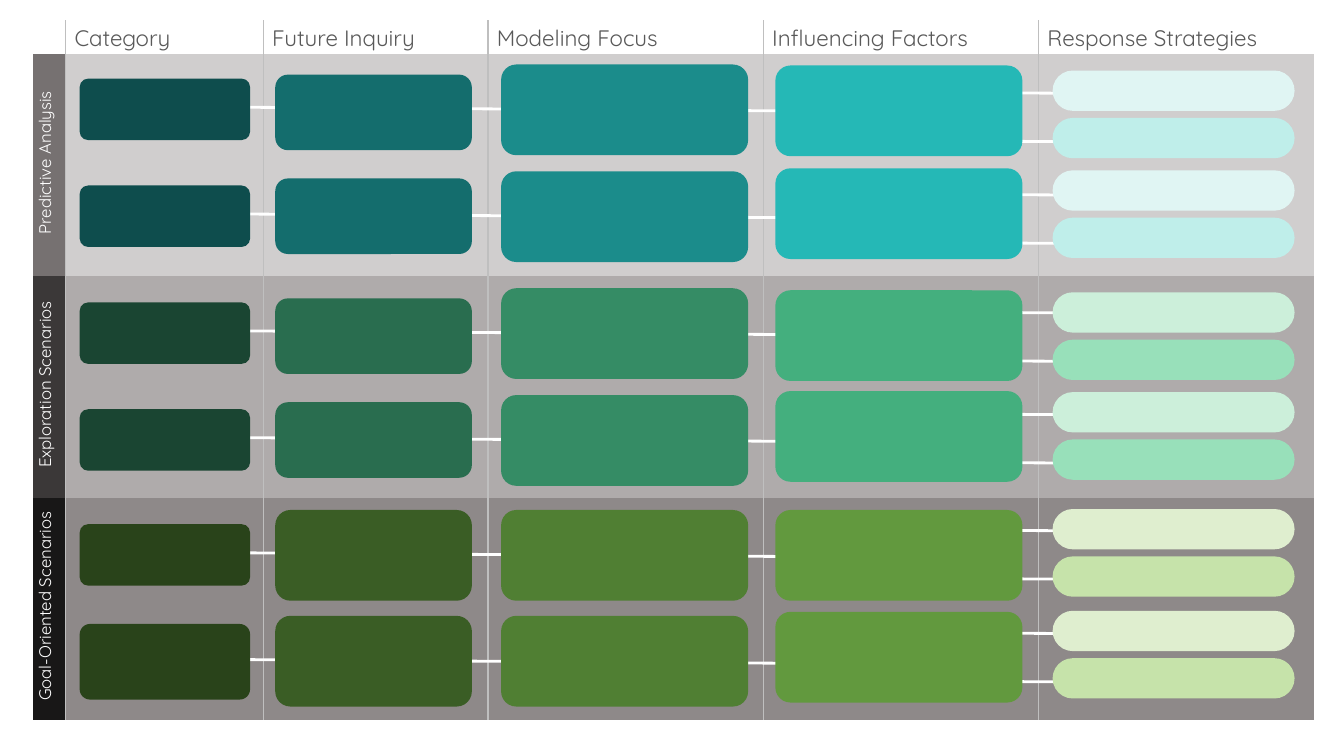
from pptx import Presentation
from pptx.dml.color import RGBColor
from pptx.enum import shapes, text
from pptx.oxml import ns, xmlchemy
from pptx.util import Inches, Pt

FONT = "Quicksand"
NO_STYLE = "{2D5ABB26-0587-4C30-8999-92F81FD0307C}"
COLORS = {"heading": "595959", "divider": "BFBFBF", "white": "FFFFFF"}

HEADINGS = ["Category", "Future Inquiry", "Modeling Focus",
            "Influencing Factors", "Response Strategies"]
COLUMN_WIDTHS = [0.32, 1.96, 2.23, 2.73, 2.73, 2.73]
ROW_HEIGHTS = [0.34, 2.2, 2.2, 2.2]

# Label, label fill, band fill, four box fills, two pill fills
GROUPS = [
    ("Predictive Analysis", "767171", "D0CECE",
     ["0E4D4D", "146D6D", "1B8C8B", "25B8B6"], ["E0F5F3", "BFEEEA"]),
    ("Exploration Scenarios", "3B3838", "AFABAB",
     ["1A4532", "296D4F", "358C65", "44AF7E"], ["CCEFDA", "98E0BA"]),
    ("Goal-Oriented Scenarios", "181717", "8E8989",
     ["29431A", "3A5D25", "507F33", "62993E"], ["DFEECF", "C6E3AA"]),
]

# Left, width, corner ratio, heights and tops of the six boxes in a column
BOX_COLUMNS = [
    (0.79, 1.69, 0.137, [0.61] * 5 + [0.75], [0.78, 1.84, 3, 4.06, 5.2, 6.19]),
    (2.73, 1.95, 0.167, [0.75] * 4 + [0.9] * 2, [0.74, 1.77, 2.96, 3.99, 5.06, 6.11]),
    (4.97, 2.45, 0.167, [0.9] * 6, [0.64, 1.7, 2.86, 3.92, 5.06, 6.11]),
    (7.69, 2.45, 0.167, [0.9] * 6, [0.65, 1.67, 2.88, 3.88, 5.06, 6.07]),
]
PILL_TOPS = [0.7, 1.69, 2.9, 3.89, 5.05, 6.06]
PILL_STEP = 0.47

# Start of the long line, then height of the upper short line
LINE_STARTS = [(1.84, 1.06, 0.92), (1.94, 2.12, 1.93), (2.01, 3.28, 3.1),
               (2.11, 4.34, 4.11), (1.76, 5.48, 5.26), (1.87, 6.54, 6.28)]
BRANCH_OFFSET, BRANCH_STEP = 7.82, 0.48


def rgb(value):
    return RGBColor.from_string(value)


def border_xml(side, color):
    fill = (f'<a:solidFill><a:srgbClr val="{color}"/></a:solidFill>'
            if color else "<a:noFill/>")
    return xmlchemy.OxmlElement(f"a:{side}"), fill


def set_borders(cell_element, has_left, has_right):
    """Draw the vertical dividers of a table cell ahead of its fill."""
    properties = cell_element.get_or_add_tcPr()
    drawn = [side for side, wanted in (("a:lnL", has_left), ("a:lnR", has_right)) if wanted]
    for position, side in enumerate(drawn):
        line = xmlchemy.OxmlElement(side)
        line.set("w", str(Pt(1)))
        fill = xmlchemy.OxmlElement("a:solidFill")
        color = xmlchemy.OxmlElement("a:srgbClr")
        color.set("val", COLORS["divider"])
        fill.append(color)
        line.append(fill)
        properties.insert(position, line)


def write_cell(cell, words, size, color, alignment):
    paragraph = cell.text_frame.paragraphs[0]
    paragraph.alignment = alignment
    run = paragraph.add_run()
    run.text = words
    run.font.name = FONT
    run.font.size = Pt(size)
    run.font.color.rgb = rgb(color)


def add_scenario_table(slide):
    frame = slide.shapes.add_table(
        len(ROW_HEIGHTS), len(COLUMN_WIDTHS), Inches(0.33), Inches(0.2),
        Inches(sum(COLUMN_WIDTHS)), Inches(sum(ROW_HEIGHTS)))
    table = frame.table
    table.first_row = table.horz_banding = False
    for style in frame.element.iter(ns.qn("a:tableStyleId")):
        style.text = NO_STYLE
    for column, width in zip(table.columns, COLUMN_WIDTHS):
        column.width = Inches(width)
    for row, height in zip(table.rows, ROW_HEIGHTS):
        row.height = Inches(height)

    for cell in table.iter_cells():
        cell.margin_left = Inches(0.09)
        cell.margin_right = cell.margin_top = Inches(0.01)
        cell.margin_bottom = 0
        cell.vertical_anchor = text.MSO_ANCHOR.MIDDLE
        cell.fill.background()
    for index, heading in enumerate(HEADINGS, start=1):
        write_cell(table.cell(0, index), heading, 16, COLORS["heading"],
                   text.PP_ALIGN.LEFT)
    for row, (label, label_fill, band_fill, *_) in enumerate(GROUPS, start=1):
        for column in range(len(COLUMN_WIDTHS)):
            fill = table.cell(row, column).fill
            fill.solid()
            fill.fore_color.rgb = rgb(band_fill if column else label_fill)
        label_cell = table.cell(row, 0)
        label_cell.margin_left = Inches(0.06)
        write_cell(label_cell, label, 12, COLORS["white"], text.PP_ALIGN.CENTER)

    last = len(COLUMN_WIDTHS) - 1
    for index, element in enumerate(frame.element.iter(ns.qn("a:tc"))):
        row, column = divmod(index, len(COLUMN_WIDTHS))
        set_borders(element, column > 0, column < last)
        if row and not column:
            element.get_or_add_tcPr().set("vert", "vert270")


def add_line(slide, left, top, width, drop):
    line = slide.shapes.add_connector(
        shapes.MSO_CONNECTOR.STRAIGHT, Inches(left), Inches(top),
        Inches(left + width), Inches(top + drop))
    line.line.color.rgb = rgb(COLORS["white"])
    line.line.width = Pt(2)
    line.element.spPr.append(xmlchemy.OxmlElement("a:effectLst"))


def add_box(slide, left, top, width, height, corner, color):
    shape = slide.shapes.add_shape(
        shapes.MSO_SHAPE.ROUNDED_RECTANGLE,
        Inches(left), Inches(top), Inches(width), Inches(height))
    shape.adjustments[0] = corner
    shape.shadow.inherit = False
    shape.fill.solid()
    shape.fill.fore_color.rgb = rgb(color)
    shape.line.fill.background()


def add_lines(slide):
    for left, top, branch_top in LINE_STARTS:
        add_line(slide, left, top, 7.39, 0.05)
        for step in range(2):
            add_line(slide, left + BRANCH_OFFSET, branch_top + step * BRANCH_STEP,
                     1.73, 0.01)


def add_boxes(slide):
    for row, pill_top in enumerate(PILL_TOPS):
        *_, box_fills, pill_fills = GROUPS[row // 2]
        for (left, width, corner, heights, tops), color in zip(BOX_COLUMNS, box_fills):
            add_box(slide, left, tops[row], width, heights[row], corner, color)
        for step, color in enumerate(pill_fills):
            add_box(slide, 10.44, pill_top + step * PILL_STEP, 2.4, 0.4, 0.5, color)


def main():
    presentation = Presentation()
    presentation.slide_width = Inches(13.33)
    presentation.slide_height = Inches(7.5)
    slide = presentation.slides.add_slide(presentation.slide_layouts[6])
    add_scenario_table(slide)
    add_lines(slide)
    add_boxes(slide)
    presentation.save("out.pptx")


if __name__ == "__main__":
    main()
